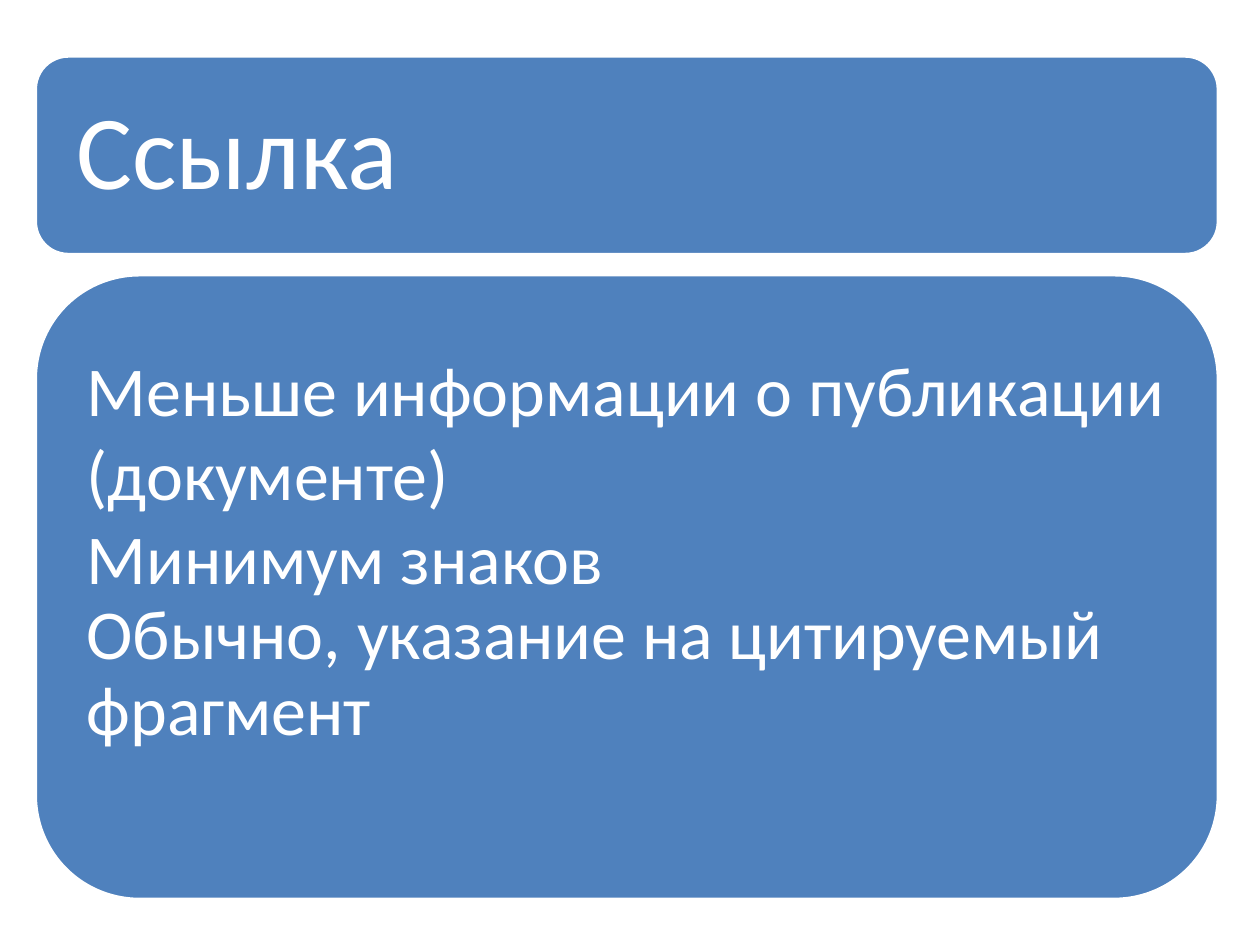
from pptx import Presentation
from pptx.dml.color import RGBColor
from pptx.enum.shapes import MSO_SHAPE
from pptx.enum.text import MSO_ANCHOR, PP_ALIGN
from pptx.util import Pt

ROUNDED = MSO_SHAPE.ROUNDED_RECTANGLE
MIDDLE = MSO_ANCHOR.MIDDLE
LEFT = PP_ALIGN.LEFT
BLUE, WHITE = "4F81BD", "FFFFFF"
LEFT_EDGE, PANEL_WIDTH = 20.16, 676.08


def rgb(value):
    return RGBColor.from_string(value)


def add_text(paragraph, text, size, color=WHITE, font="Calibri", spacing=1.0):
    paragraph.alignment = LEFT
    paragraph.line_spacing = spacing
    run = paragraph.add_run()
    run.text = text
    run.font.name = font
    run.font.size = Pt(size)
    run.font.color.rgb = rgb(color)


def add_panel(slide, box, lines, size, inset, bottom_inset):
    panel = slide.shapes.add_shape(ROUNDED, *map(Pt, box))
    panel.shadow.inherit = False
    panel.fill.solid()
    panel.fill.fore_color.rgb = rgb(BLUE)
    panel.line.color.rgb = rgb(WHITE)
    panel.line.width = Pt(2)

    frame = panel.text_frame
    frame.word_wrap = True
    frame.vertical_anchor = MIDDLE
    frame.margin_left = frame.margin_right = frame.margin_top = Pt(inset)
    frame.margin_bottom = Pt(bottom_inset)
    for index, (text, spacing) in enumerate(lines):
        paragraph = frame.add_paragraph() if index else frame.paragraphs[0]
        add_text(paragraph, text, size, spacing=spacing)


def main():
    presentation = Presentation()
    presentation.slide_width = Pt(720)
    presentation.slide_height = Pt(540)
    slide = presentation.slides.add_slide(presentation.slide_layouts[6])

    heading = [("Ссылка", 0.9)]
    features = [
        ("Меньше информации о публикации (документе)", 1.0),
        ("Минимум знаков", 1.0),
        ("Обычно, указание на цитируемый фрагмент", 0.9),
    ]
    add_panel(slide, (LEFT_EDGE, 32, PANEL_WIDTH, 113.5), heading, 60, 18, 18)
    add_panel(slide, (LEFT_EDGE, 157, PANEL_WIDTH, 357), features, 40, 12, 56)

    presentation.save("out.pptx")


if __name__ == "__main__":
    main()
